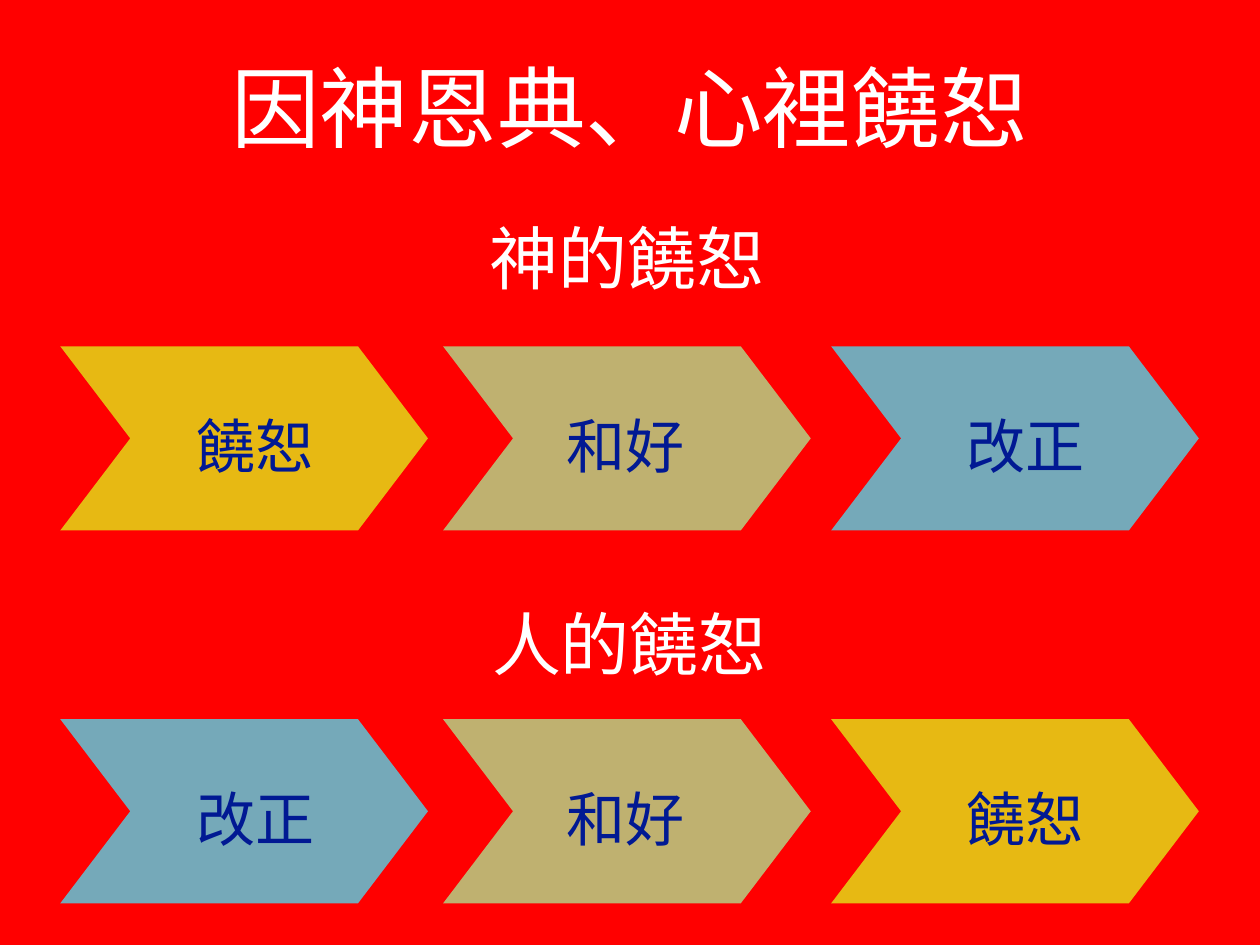
from dataclasses import dataclass

from pptx import Presentation
from pptx.dml.color import RGBColor
from pptx.enum.shapes import MSO_SHAPE
from pptx.enum.text import MSO_ANCHOR, MSO_AUTO_SIZE, PP_ALIGN
from pptx.util import Inches, Pt


@dataclass(frozen=True)
class Theme:
    font: str = "Roboto"
    background: RGBColor = RGBColor(0xFF, 0x00, 0x00)
    heading: RGBColor = RGBColor(0xFF, 0xFF, 0xFF)
    label: RGBColor = RGBColor(0x01, 0x19, 0x93)
    gold: RGBColor = RGBColor(0xE7, 0xB9, 0x13)
    khaki: RGBColor = RGBColor(0xBF, 0xB1, 0x70)
    blue: RGBColor = RGBColor(0x75, 0xA9, 0xB9)
    title_size: int = 72
    section_size: int = 56
    label_size: int = 48


theme = Theme()


def write_text(box, text, size, color):
    """Fill a box with one centred line."""
    frame = box.text_frame
    frame.word_wrap = True
    frame.auto_size = MSO_AUTO_SIZE.NONE
    frame.vertical_anchor = MSO_ANCHOR.MIDDLE
    frame.margin_left = frame.margin_right = Inches(0.06)
    frame.margin_top = frame.margin_bottom = Inches(0.06)
    para = frame.paragraphs[0]
    para.text = text
    para.alignment = PP_ALIGN.CENTER
    para.font.name = theme.font
    para.font.size = Pt(size)
    para.font.color.rgb = color


# Slide and background
deck = Presentation()
deck.slide_width, deck.slide_height = Inches(14.22), Inches(10.67)
page = deck.slides.add_slide(deck.slide_layouts[5])
page.background.fill.solid()
page.background.fill.fore_color.rgb = theme.background

# Title
title = page.shapes.title
title.left, title.top = Inches(1.04), Inches(0.46)
title.width, title.height = Inches(12.14), Inches(1.48)
write_text(title, "因神恩典、心裡饒恕", theme.title_size, theme.heading)

# Two sequences: heading, its left and top, top of the chevrons, steps
step_colors = {"饒恕": theme.gold, "和好": theme.khaki, "改正": theme.blue}
sequences = [
    ("神的饒恕", 5.08, 2.4, 3.91, ["饒恕", "和好", "改正"]),
    ("人的饒恕", 5.11, 6.76, 8.12, ["改正", "和好", "饒恕"]),
]
chevron_lefts = [0.68, 5, 9.38]
label_lefts = [2.15, 6.33, 10.84]
chevron_width, chevron_height, notch = 4.15, 2.08, 0.79
label_offset = 0.72

for heading, heading_left, heading_top, row_top, steps in sequences:
    heading_box = page.shapes.add_textbox(
        Inches(heading_left), Inches(heading_top), Inches(4), Inches(1))
    write_text(heading_box, heading, theme.section_size, theme.heading)

    for step, left, label_left in zip(steps, chevron_lefts, label_lefts):
        chevron = page.shapes.add_shape(
            MSO_SHAPE.CHEVRON, Inches(left), Inches(row_top),
            Inches(chevron_width), Inches(chevron_height))
        chevron.adjustments[0] = notch / chevron_height
        chevron.shadow.inherit = False
        chevron.fill.solid()
        chevron.fill.fore_color.rgb = step_colors[step]
        chevron.line.fill.background()

        label_box = page.shapes.add_textbox(
            Inches(label_left), Inches(row_top + label_offset),
            Inches(1.46), Inches(0.78))
        write_text(label_box, step, theme.label_size, theme.label)

deck.save("out.pptx")
